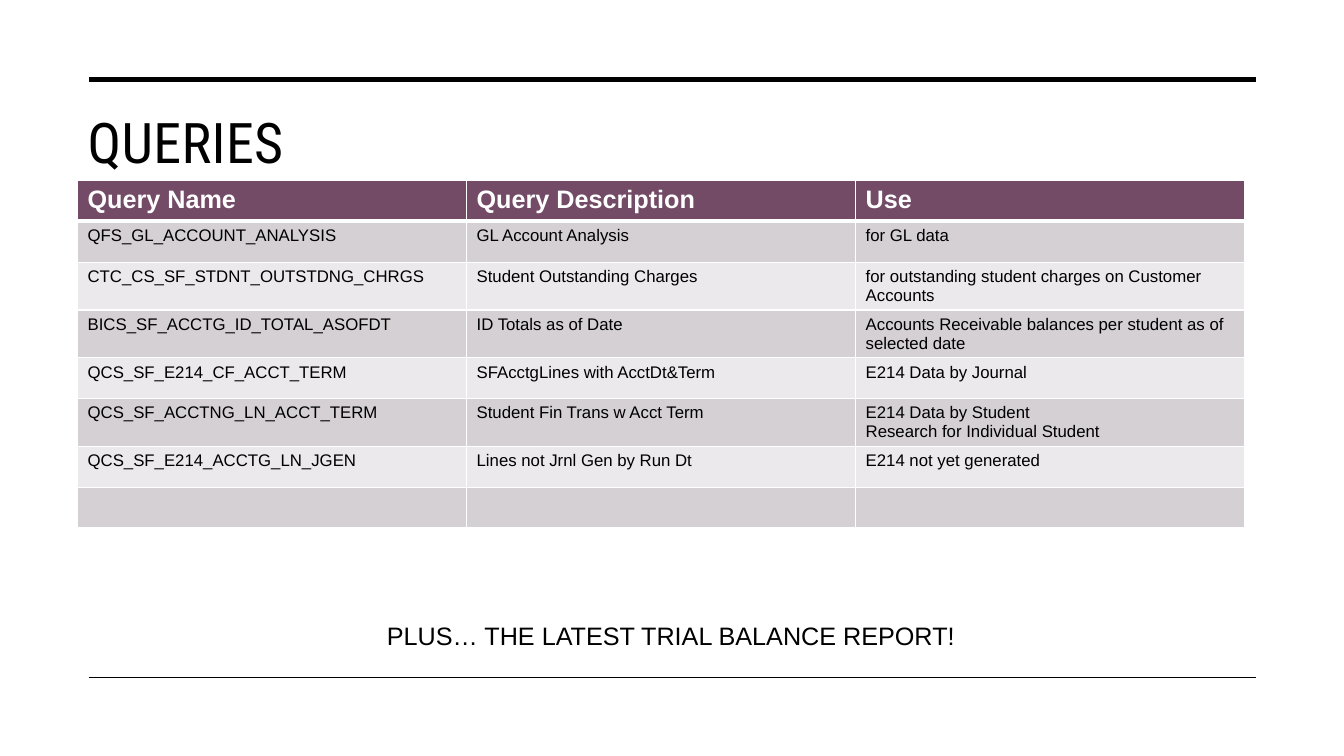
from dataclasses import dataclass
from typing import Any

from lxml.etree import SubElement
from pptx import Presentation
from pptx.dml.color import RGBColor
from pptx.enum.shapes import MSO_CONNECTOR
from pptx.enum.text import MSO_ANCHOR, MSO_AUTO_SIZE, PP_ALIGN
from pptx.oxml.ns import qn
from pptx.util import Pt


@dataclass(frozen=True)
class Theme:
    ink: str = "000000"
    white: str = "FFFFFF"
    header: str = "734B67"
    bands: tuple[str, str] = ("D5D0D3", "EBE9EB")
    title_font: str = "Roboto Condensed"
    body_font: str = "Arial"
    title_size: float = 40
    large_size: float = 18
    cell_size: float = 12


@dataclass(frozen=True)
class Rule:
    y: float
    weight: float


@dataclass(frozen=True)
class Query:
    name: str = ""
    description: str = ""
    use: str = ""


THEME = Theme()
RULE_LEFT, RULE_RIGHT = 63.4, 897.1
RULES = [Rule(56.9, 3.5), Rule(483.8, 1)]
LEFT, TABLE_TOP = 55.4, 128.9
COLUMN_WIDTH, ROW_HEIGHT = 277.9, 29.2
HEADER = Query("Query Name", "Query Description", "Use")
QUERIES = [
    Query("QFS_GL_ACCOUNT_ANALYSIS", "GL Account Analysis", "for GL data"),
    Query("CTC_CS_SF_STDNT_OUTSTDNG_CHRGS", "Student Outstanding Charges",
          "for outstanding student charges on Customer Accounts"),
    Query("BICS_SF_ACCTG_ID_TOTAL_ASOFDT", "ID Totals as of Date",
          "Accounts Receivable balances per student as of selected date"),
    Query("QCS_SF_E214_CF_ACCT_TERM", "SFAcctgLines with AcctDt&Term",
          "E214 Data by Journal"),
    Query("QCS_SF_ACCTNG_LN_ACCT_TERM", "Student Fin Trans w Acct Term",
          "E214 Data by Student\vResearch for Individual Student"),
    Query("QCS_SF_E214_ACCTG_LN_JGEN", "Lines not Jrnl Gen by Run Dt",
          "E214 not yet generated"),
    Query(),
]


def set_attributes(target: Any, values: dict[str, Any]) -> None:
    for name, value in values.items():
        setattr(target, name, value)


def write(tf: Any, text: str, size: float, color: str = THEME.ink,
          font: str = THEME.body_font, bold: bool = False) -> None:
    tf.text = text
    for r in tf.paragraphs[0].runs:
        set_attributes(r.font, {"name": font, "size": Pt(size), "bold": bold})
        r.font.color.rgb = RGBColor.from_string(color)


def add_rule(s: Any, rule: Rule) -> None:
    line = s.shapes.add_connector(MSO_CONNECTOR.STRAIGHT, Pt(RULE_LEFT), Pt(rule.y),
                                  Pt(RULE_RIGHT), Pt(rule.y))
    line.line.color.rgb = RGBColor.from_string(THEME.ink)
    line.line.width = Pt(rule.weight)
    SubElement(line._element.spPr, qn("a:effectLst"))


def add_title(s: Any, text: str) -> None:
    sp = s.shapes.title
    set_attributes(sp, {"left": Pt(LEFT), "top": Pt(72),
                        "width": Pt(841.7), "height": Pt(56.9)})
    tf = sp.text_frame
    write(tf, text, THEME.title_size, font=THEME.title_font)
    set_attributes(tf, {"auto_size": MSO_AUTO_SIZE.NONE, "word_wrap": True,
                        "vertical_anchor": MSO_ANCHOR.MIDDLE})
    p = tf.paragraphs[0]
    p.alignment = PP_ALIGN.LEFT
    p.runs[0]._r.get_or_add_rPr().set("spc", "30")


def add_borders(cell: Any, top: float, bottom: float) -> None:
    tc_pr = cell._tc.get_or_add_tcPr()
    for side, weight in {"L": 1, "R": 1, "T": top, "B": bottom}.items():
        ln = SubElement(tc_pr, qn(f"a:ln{side}"), w=str(Pt(weight)))
        SubElement(SubElement(ln, qn("a:solidFill")), qn("a:srgbClr"), val=THEME.white)


def add_query_table(s: Any) -> None:
    rows = [HEADER, *QUERIES]
    table = s.shapes.add_table(len(rows), 3, Pt(LEFT), Pt(TABLE_TOP), Pt(3 * COLUMN_WIDTH),
                               Pt(len(rows) * ROW_HEIGHT)).table
    for column in table.columns:
        column.width = Pt(COLUMN_WIDTH)
    for i, query in enumerate(rows):
        table.rows[i].height = Pt(ROW_HEIGHT)
        is_header = i == 0
        fill = THEME.header if is_header else THEME.bands[(i - 1) % 2]
        texts = (query.name, query.description, query.use)
        for cell, text in zip(table.rows[i].cells, texts):
            add_borders(cell, top=3 if i == 1 else 1, bottom=3 if is_header else 1)
            cell.fill.solid()
            cell.fill.fore_color.rgb = RGBColor.from_string(fill)
            if is_header:
                write(cell.text_frame, text, THEME.large_size, THEME.white, bold=True)
            else:
                write(cell.text_frame, text, THEME.cell_size)


def add_closing_note(s: Any, text: str) -> None:
    tf = s.shapes.add_textbox(Pt(269.3), Pt(439.2), Pt(436.3), Pt(29.1)).text_frame
    write(tf, text, THEME.large_size)
    set_attributes(tf, {"word_wrap": False, "auto_size": MSO_AUTO_SIZE.SHAPE_TO_FIT_TEXT})


def main() -> None:
    prs = Presentation()
    set_attributes(prs, {"slide_width": Pt(960), "slide_height": Pt(540)})
    s = prs.slides.add_slide(prs.slide_layouts.get_by_name("Title Only"))
    for rule in RULES:
        add_rule(s, rule)
    add_title(s, "QUERIES")
    add_query_table(s)
    add_closing_note(s, "PLUS… THE LATEST TRIAL BALANCE REPORT!")
    prs.save("out.pptx")


if __name__ == "__main__":
    main()
